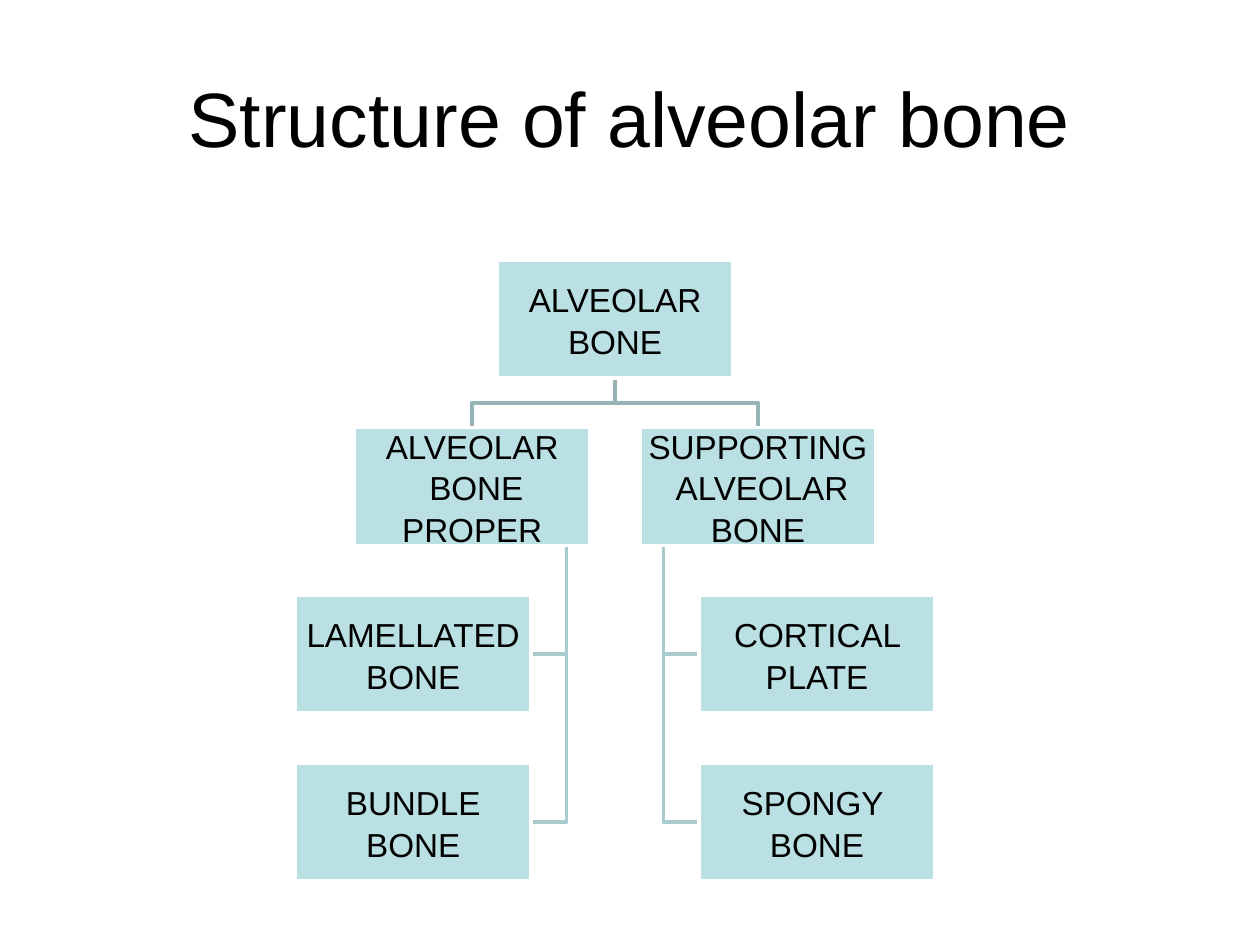
from pptx import Presentation
from pptx import util as u
from pptx.dml.color import RGBColor
from pptx.enum import shapes, text

# Chart grid, in cm
MID, TOP = 12.4, 5.24       # centre line and top of the first row
WIDE, HIGH, GAP = 4.76, 2.38, 1
STEP = HIGH + GAP
BRANCH = (WIDE + GAP) / 2   # from the centre line to a branch box
LEAF = 4.07                 # from the centre line to a leaf box
STEM = GAP / 2 + WIDE / 10  # from the centre line to a stem


def color(code):
    return RGBColor.from_string(code)


class Board:
    font, ink, fill, edge = "Arial", "000000", "BBE0E3", "FFFFFF"

    def __init__(self, slide):
        self.slide = slide

    def label(self, frame, lines, size, rtl=False):
        frame.word_wrap = True
        frame.vertical_anchor = text.MSO_ANCHOR.MIDDLE
        for i, line in enumerate(lines):
            para = frame.add_paragraph() if i else frame.paragraphs[0]
            para.alignment = text.PP_ALIGN.CENTER
            if rtl:
                para.line_spacing = 1.05
                para._p.get_or_add_pPr().set("rtl", "1")
            run = para.add_run()
            run.text = line
            run.font.name = self.font
            run.font.size = u.Pt(size)
            run.font.color.rgb = color(self.ink)

    def title(self, line):
        shape = self.slide.shapes.title
        shape.left, shape.top = u.Cm(1.27), u.Cm(0.76)
        shape.width, shape.height = u.Cm(22.86), u.Cm(3.18)
        self.label(shape.text_frame, [line], 44)

    def box(self, mid, top, lines):
        shape = self.slide.shapes.add_shape(
            shapes.MSO_SHAPE.RECTANGLE, u.Cm(mid - WIDE / 2), u.Cm(top),
            u.Cm(WIDE), u.Cm(HIGH))
        shape.shadow.inherit = False
        shape.fill.solid()
        shape.fill.fore_color.rgb = color(self.fill)
        shape.line.color.rgb = color(self.edge)
        shape.line.width = u.Pt(2)
        frame = shape.text_frame
        frame.margin_left = frame.margin_right = u.Cm(0.03)
        frame.margin_top = frame.margin_bottom = u.Cm(0.03)
        self.label(frame, lines, 19, rtl=True)

    def link(self, points, code):
        start, *rest = [(u.Cm(x), u.Cm(y)) for x, y in points]
        pen = self.slide.shapes.build_freeform(*start)
        pen.add_line_segments(rest, close=False)
        shape = pen.convert_to_shape()
        shape.shadow.inherit = False
        shape.fill.background()
        shape.line.color.rgb = color(code)
        shape.line.width = u.Pt(2)


def main():
    deck = Presentation()
    deck.slide_width, deck.slide_height = u.Cm(25.4), u.Cm(19.05)
    board = Board(deck.slides.add_slide(deck.slide_layouts[5]))
    board.title("Structure of alveolar bone")

    # Side of the centre line, branch text, leaf texts
    tree = [
        (-1, ["ALVEOLAR BONE ", "PROPER"],
         ["LAMELLATED BONE", "BUNDLE BONE"]),
        (1, ["SUPPORTING ALVEOLAR ", "BONE"],
         ["CORTICAL PLATE", "SPONGY  BONE"]),
    ]
    rows = [TOP + i * STEP for i in range(4)]

    # Links, behind the boxes
    for side, _, leaves in tree:
        turn = rows[1] - GAP / 2
        far = MID + side * BRANCH
        board.link([(MID, rows[0] + HIGH), (MID, turn), (far, turn),
                    (far, rows[1])], "96B3B6")
        stem = MID + side * STEM
        for top, _ in zip(rows[2:], leaves):
            level = top + HIGH / 2
            board.link([(stem, rows[1] + HIGH), (stem, level),
                        (MID + side * (LEAF - WIDE / 2), level)], "AACBCE")

    # Boxes
    board.box(MID, rows[0], ["ALVEOLAR BONE"])
    for side, branch, leaves in tree:
        board.box(MID + side * BRANCH, rows[1], branch)
        for top, leaf in zip(rows[2:], leaves):
            board.box(MID + side * LEAF, top, [leaf])

    deck.save("out.pptx")


if __name__ == "__main__":
    main()
